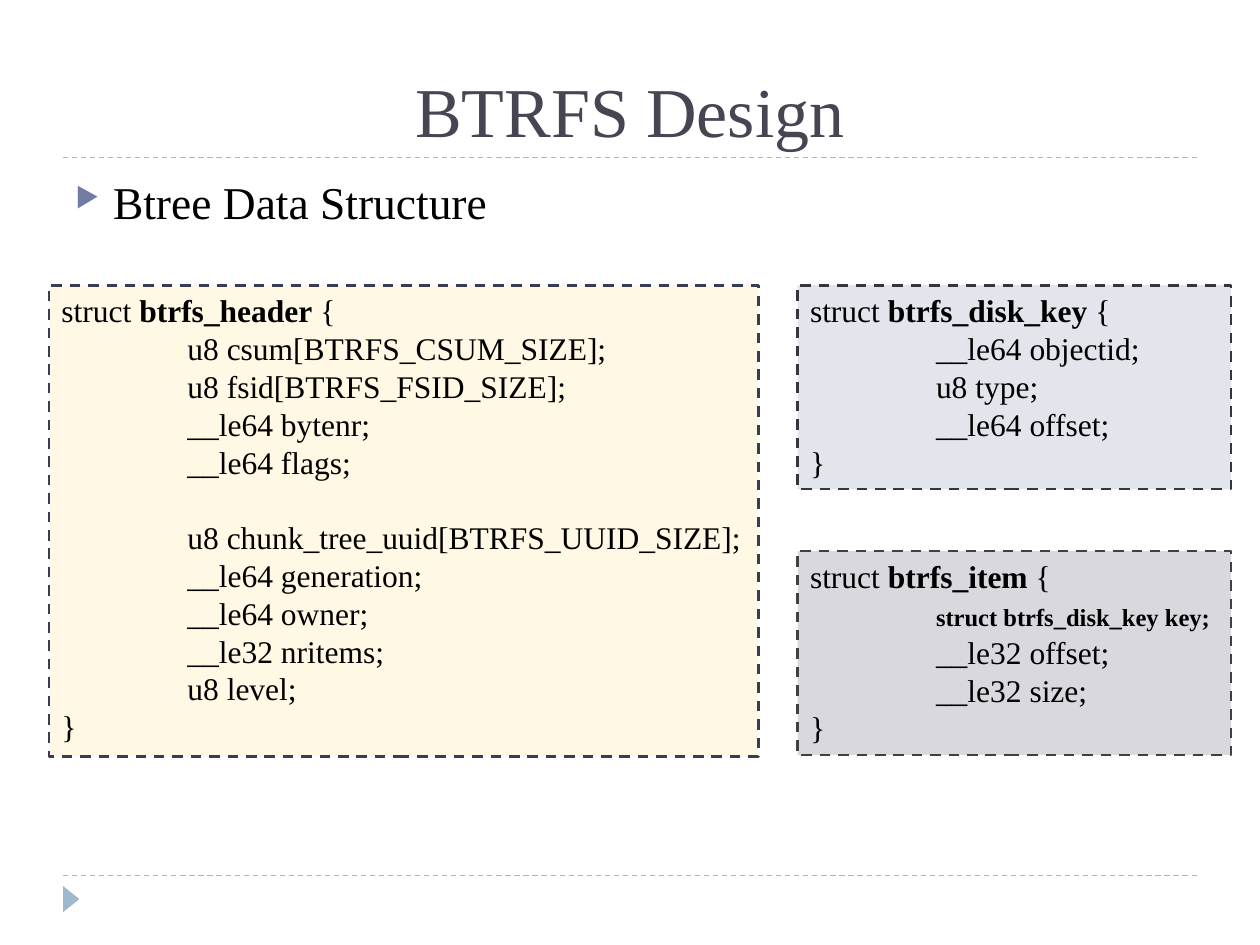
from lxml.etree import SubElement
from pptx import Presentation
from pptx.dml.color import RGBColor
from pptx.enum.dml import MSO_LINE
from pptx.enum.shapes import MSO_CONNECTOR, MSO_SHAPE
from pptx.enum.text import MSO_ANCHOR, PP_ALIGN
from pptx.oxml.ns import qn
from pptx.util import Cm, Pt

BLACK = RGBColor(0x00, 0x00, 0x00)
TITLE = RGBColor(0x46, 0x46, 0x53)
ACCENT = RGBColor(0x9F, 0xB8, 0xCD)
CREAM, NAVY = RGBColor(0xFE, 0xF8, 0xE4), RGBColor(0x37, 0x3D, 0x54)
MIST, INK = RGBColor(0xE3, 0xE5, 0xED), RGBColor(0x35, 0x35, 0x3E)
GREY, CHARCOAL = RGBColor(0xD8, 0xD8, 0xDE), RGBColor(0x40, 0x40, 0x40)
BULLET = RGBColor(0x72, 0x7C, 0xA3)

LEFT, WIDTH = 1.27, 22.86      # margins shared by title, body and rules
TOP = 5.75                     # first row of struct boxes
RIGHT, RIGHT_W, RIGHT_H = 16.08, 8.74, 4.11
PITCH = 21.6                   # code line height in points
TAB = 2.54                     # code indent


class Deck:
    font = "Times New Roman"

    def __init__(self, prs):
        self.s = prs.slides.add_slide(prs.slide_layouts[6])

    def run(self, p, text, size, color=BLACK, bold=False):
        r = p.add_run()
        r.text = text
        style = {"name": self.font, "size": Pt(size), "bold": bold}
        for key, value in style.items():
            setattr(r.font, key, value)
        r.font.color.rgb = color

    def dash(self, line, color, width):
        line.color.rgb = color
        line.width = Pt(width)
        line.dash_style = MSO_LINE.DASH

    def rule(self, y):
        c = self.s.shapes.add_connector(
            MSO_CONNECTOR.STRAIGHT, Cm(LEFT), Cm(y), Cm(LEFT + WIDTH), Cm(y))
        self.dash(c.line, ACCENT, 0.75)
        SubElement(c._element.spPr, qn("a:effectLst"))

    def shape(self, kind, x, y, w, h, fill):
        sp = self.s.shapes.add_shape(kind, Cm(x), Cm(y), Cm(w), Cm(h))
        sp.shadow.inherit = False
        sp.fill.solid()
        sp.fill.fore_color.rgb = fill
        return sp

    def marker(self, x, y, w, h):
        sp = self.shape(MSO_SHAPE.ISOSCELES_TRIANGLE, x, y, w, h, ACCENT)
        sp.line.fill.background()
        sp.rotation = 90

    def text(self, y, h, text, size, color=BLACK, anchor=MSO_ANCHOR.TOP):
        tf = self.s.shapes.add_textbox(Cm(LEFT), Cm(y), Cm(WIDTH), Cm(h)).text_frame
        tf.word_wrap = True
        tf.vertical_anchor = anchor
        p = tf.paragraphs[0]
        self.run(p, text, size, color)
        return p

    def bullet(self, p):
        p.space_before = Pt(6)
        pPr = p._p.get_or_add_pPr()
        pPr.set("marL", str(Cm(0.76)))
        pPr.set("indent", str(-Cm(0.76)))
        SubElement(SubElement(pPr, qn("a:buClr")), qn("a:srgbClr"), val=str(BULLET))
        SubElement(pPr, qn("a:buSzPct"), val="60000")
        SubElement(pPr, qn("a:buChar"), char="▶")

    def struct(self, x, y, w, h, fill, line, name, groups, key=None):
        """Draw a C struct; groups of fields are set apart by one line."""
        sp = self.shape(MSO_SHAPE.RECTANGLE, x, y, w, h, fill)
        self.dash(sp.line, line, 1.5)
        tf = sp.text_frame
        tf.word_wrap = True
        tf.vertical_anchor = MSO_ANCHOR.TOP

        p = tf.paragraphs[0]
        for text, bold in (("struct ", False), (name, True), (" {", False)):
            self.run(p, text, 18, bold=bold)
        if key:
            p = tf.add_paragraph()
            self.run(p, "\t", 18)
            self.run(p, key, 14, bold=True)
        for i, group in enumerate(groups):
            for j, field in enumerate(group):
                p = tf.add_paragraph()
                self.run(p, f"\t{field};", 18)
                if i and not j:
                    p.space_before = Pt(PITCH)
        self.run(tf.add_paragraph(), "}", 18)

        for p in tf.paragraphs:
            p.alignment = PP_ALIGN.LEFT
            p.line_spacing = Pt(PITCH)
            pPr = p._p.get_or_add_pPr()
            pPr.set("defTabSz", str(Cm(TAB)))
            tabs = SubElement(pPr, qn("a:tabLst"))
            SubElement(tabs, qn("a:tab"), pos=str(Cm(TAB)), algn="l")


def main():
    prs = Presentation()
    prs.slide_width, prs.slide_height = Cm(25.4), Cm(19.05)
    deck = Deck(prs)

    # Rules and footer marker
    for y in (17.65, 3.18):
        deck.rule(y)
    deck.marker(1.17, 17.96, 0.53, 0.33)

    # Title and body
    title = deck.text(0.43, 2.74, "BTRFS Design", 40, TITLE, MSO_ANCHOR.BOTTOM)
    title.alignment = PP_ALIGN.CENTER
    deck.bullet(deck.text(3.38, 13.72, "Btree Data Structure", 26))

    # Struct boxes
    deck.struct(RIGHT, TOP, RIGHT_W, RIGHT_H, MIST, INK, "btrfs_disk_key",
                [["__le64 objectid", "u8 type", "__le64 offset"]])
    deck.struct(0.99, TOP, 14.3, 9.5, CREAM, NAVY, "btrfs_header", [
        ["u8 csum[BTRFS_CSUM_SIZE]", "u8 fsid[BTRFS_FSID_SIZE]",
         "__le64 bytenr", "__le64 flags"],
        ["u8 chunk_tree_uuid[BTRFS_UUID_SIZE]", "__le64 generation",
         "__le64 owner", "__le32 nritems", "u8 level"]])
    deck.struct(RIGHT, 11.11, RIGHT_W, RIGHT_H, GREY, CHARCOAL, "btrfs_item",
                [["__le32 offset", "__le32 size"]],
                key="struct btrfs_disk_key key;")

    prs.save("out.pptx")


if __name__ == "__main__":
    main()
